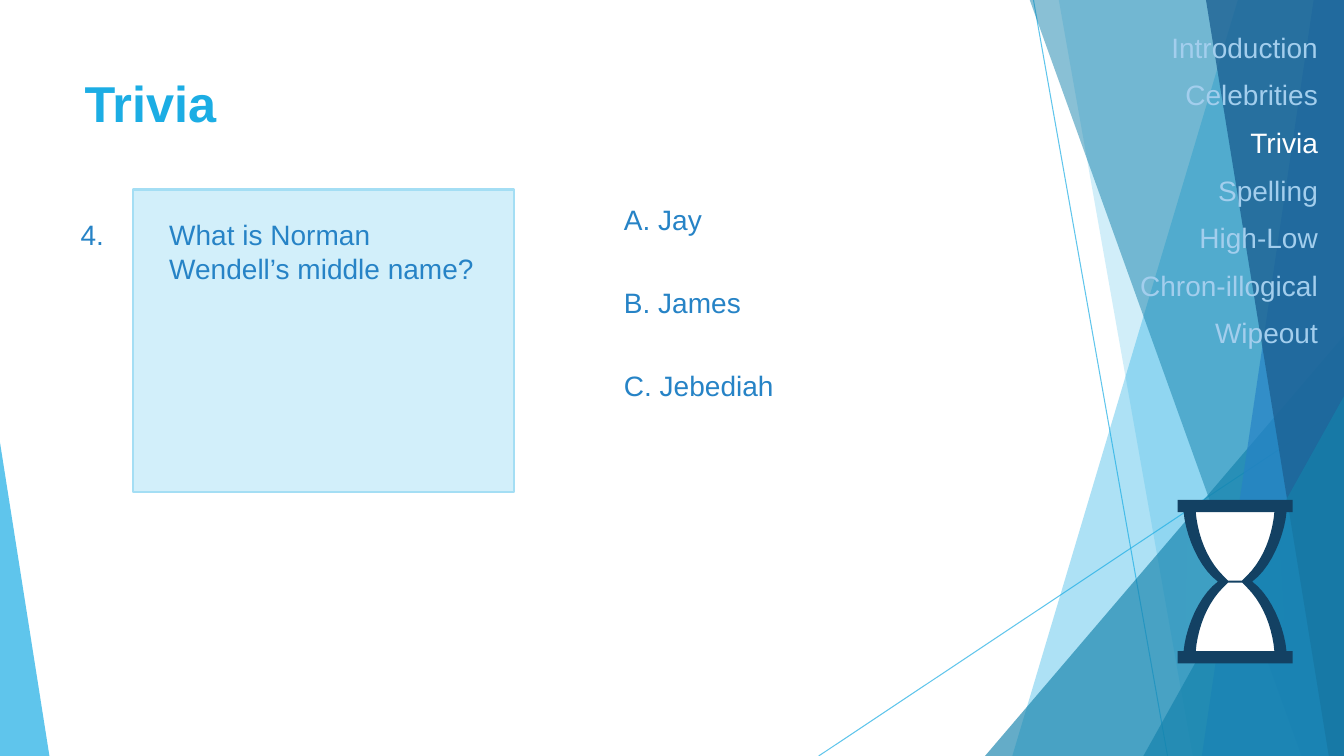
import pptx
import pptx.util
import pptx.dml.color
import pptx.enum.shapes
import pptx.enum.text
from pptx.util import Inches, Pt
from lxml import etree

THEME = {
    "font": "Arial", "title_size": 36, "body_size": 20,
    "sky": "1CADE4", "teal": "1482AC", "blue": "2683C6", "navy": "1D6294",
    "card": "D2EFFA", "card_edge": "A4DEF4", "white": "FFFFFF",
    "faded": "A3CEED", "frame": "134163",
    "left_shade": "3E9FC3", "right_shade": "1A84B3",
}
A = "{http://schemas.openxmlformats.org/drawingml/2006/main}"

deck = pptx.Presentation()
deck.slide_width, deck.slide_height = Inches(13.33), Inches(7.5)
slide = deck.slides.add_slide(deck.slide_layouts[6])
shapes = slide.shapes


def paint(part, color, opacity=100):
    part.shadow.inherit = False
    part.line.fill.background()
    part.fill.solid()
    part.fill.fore_color.rgb = pptx.dml.color.RGBColor.from_string(THEME[color])
    if opacity < 100:
        tint = next(part.fill._xPr.iter(A + "srgbClr"))
        etree.SubElement(tint, A + "alpha", val=str(opacity * 1000))


def outline(contours, color, opacity=100):
    builder = None
    for contour in contours:
        corners = [(Inches(x), Inches(y)) for x, y in contour]
        if builder is None:
            builder = shapes.build_freeform(*corners[0])
        else:
            builder.move_to(*corners[0])
        builder.add_line_segments(corners[1:], close=True)
    paint(builder.convert_to_shape(), color, opacity)


for x1, y1, x2, y2 in [(10.25, 0, 11.58, 7.5), (13.33, 4.03, 8.12, 7.5)]:
    ray = shapes.add_connector(pptx.enum.shapes.MSO_CONNECTOR.STRAIGHT,
                               Inches(x1), Inches(y1), Inches(x2), Inches(y2))
    ray.line.width = Pt(0.75)
    ray.line.color.rgb = pptx.dml.color.RGBColor.from_string(THEME["sky"])
    etree.SubElement(next(ray.line._ln.iter(A + "srgbClr")), A + "alpha", val="70000")
    etree.SubElement(ray._element.spPr, A + "effectLst")

facets = [
    ("band", 12.28, 10.04, "sky", 36),
    ("band", 10.5, 11.83, "sky", 20),
    ("triangle", 9.77, 3.33, 3.56, 1, "teal", 66),
    ("band", 10.21, 12.91, "teal", 50),
    ("band", 13.03, 11.92, "blue", 70),
    ("band", 11.96, 13.18, "navy", 80),
    ("triangle", 11.34, 3.93, 1.99, 1, "teal", 66),
    ("triangle", 0, 4.39, 0.49, 0, "sky", 70),
]
for kind, *facet in facets:
    if kind == "band":
        top_x, bottom_x, color, opacity = facet
        outline([[(top_x, -0.01), (13.33, -0.01), (13.33, 7.5), (bottom_x, 7.5)]],
                color, opacity)
    else:
        left, top, width, peak, color, opacity = facet
        wedge = shapes.add_shape(pptx.enum.shapes.MSO_SHAPE.ISOSCELES_TRIANGLE,
                                 Inches(left), Inches(top), Inches(width), Inches(7.5 - top))
        wedge.adjustments[0] = peak
        paint(wedge, color, opacity)

card = shapes.add_shape(pptx.enum.shapes.MSO_SHAPE.RECTANGLE,
                        Inches(1.32), Inches(1.88), Inches(3.78), Inches(3))
paint(card, "card")
card.line.color.rgb = pptx.dml.color.RGBColor.from_string(THEME["card_edge"])
card.line.width = Pt(1.5)

sections = ["Introduction", "Celebrities", "Trivia", "Spelling", "High-Low",
            "Chron-illogical", "Wipeout"]
current = "Trivia"
menu = [(name, "white" if name == current else "faded") for name in sections]
answers = ["A. Jay", "B. James", "C. Jebediah"]
plain = {"size": Pt(THEME["body_size"]), "name": THEME["font"]}
heading = {"size": Pt(THEME["title_size"]), "name": THEME["font"], "bold": True}
flow = {}
menu_flow = {"alignment": pptx.enum.text.PP_ALIGN.RIGHT, "space_before": Pt(10)}
fixed = {"word_wrap": True}
fitted = {"word_wrap": True, "auto_size": pptx.enum.text.MSO_AUTO_SIZE.SHAPE_TO_FIT_TEXT}
texts = [
    ((0.74, 0.67, 9.4, 1.44), [(current, "sky")], heading, flow, fixed),
    ((1.58, 2.11, 3.3, 0.77), [("What is Norman Wendell’s middle name?", "blue")],
     plain, flow, fitted),
    ((0.7, 2.11, 0.45, 0.44), [("4.", "blue")], plain, flow, {**fitted, "word_wrap": False}),
    *[((6.09, 1.96 + 0.825 * row, 1.77, 0.44), [(answer, "blue")], plain, flow, fitted)
      for row, answer in enumerate(answers)],
    ((10.56, 0.25, 2.61, 4.52), menu, plain, menu_flow, fixed),
]
for place, lines, font_format, paragraph_format, frame_format in texts:
    frame = shapes.add_textbox(*map(Inches, place)).text_frame
    for key, value in frame_format.items():
        setattr(frame, key, value)
    for row, (words, color) in enumerate(lines):
        paragraph = frame.add_paragraph() if row else frame.paragraphs[0]
        for key, value in paragraph_format.items():
            setattr(paragraph, key, value)
        run = paragraph.add_run()
        run.text = words
        for key, value in font_format.items():
            setattr(run.font, key, value)
        run.font.color.rgb = pptx.dml.color.RGBColor.from_string(THEME[color])

glass = shapes.add_shape(pptx.enum.shapes.MSO_SHAPE.RECTANGLE,
                         Inches(11.86), Inches(5.07), Inches(0.79), Inches(1.39))
paint(glass, "white")
outline([[(12.7, 6.19), (12.74, 6.13), (12.7, 5.51), (12.66, 5.36), (12.37, 5.77)]],
        "right_shade")
outline([[(11.81, 5.34), (11.77, 5.4), (11.76, 6.18), (11.85, 6.18), (12.14, 5.76)]],
        "left_shade")

waist_x, waist_y = 12.25, 5.77
outer_curve = [(0.51, -0.69), (0.49, -0.46), (0.36, -0.14), (0.17, 0)]
inner_curve = [(0.39, -0.69), (0.37, -0.46), (0.28, -0.22), (0.12, -0.06)]
steps = 10
profiles = []
for curve in (outer_curve, inner_curve):
    profile = []
    for step in range(steps + 1):
        t = step / steps
        weights = [(1 - t) ** 3, 3 * t * (1 - t) ** 2, 3 * t * t * (1 - t), t ** 3]
        profile.append(tuple(sum(w * point[axis] for w, point in zip(weights, curve))
                             for axis in (0, 1)))
    profiles.append(profile)
outer = [(0.57, -0.81), (0.57, -0.69)] + profiles[0]
inner = profiles[1] + [(0.07, -0.01)]
right_side = outer + [(x, -y) for x, y in reversed(outer)]
body = right_side + [(-x, y) for x, y in reversed(right_side)]
upper_bulb = inner + [(-x, y) for x, y in reversed(inner)]
lower_bulb = [(x, -y) for x, y in upper_bulb]
outline([[(waist_x + x, waist_y + y) for x, y in contour]
         for contour in (body, upper_bulb, lower_bulb)], "frame")

deck.save("out.pptx")
